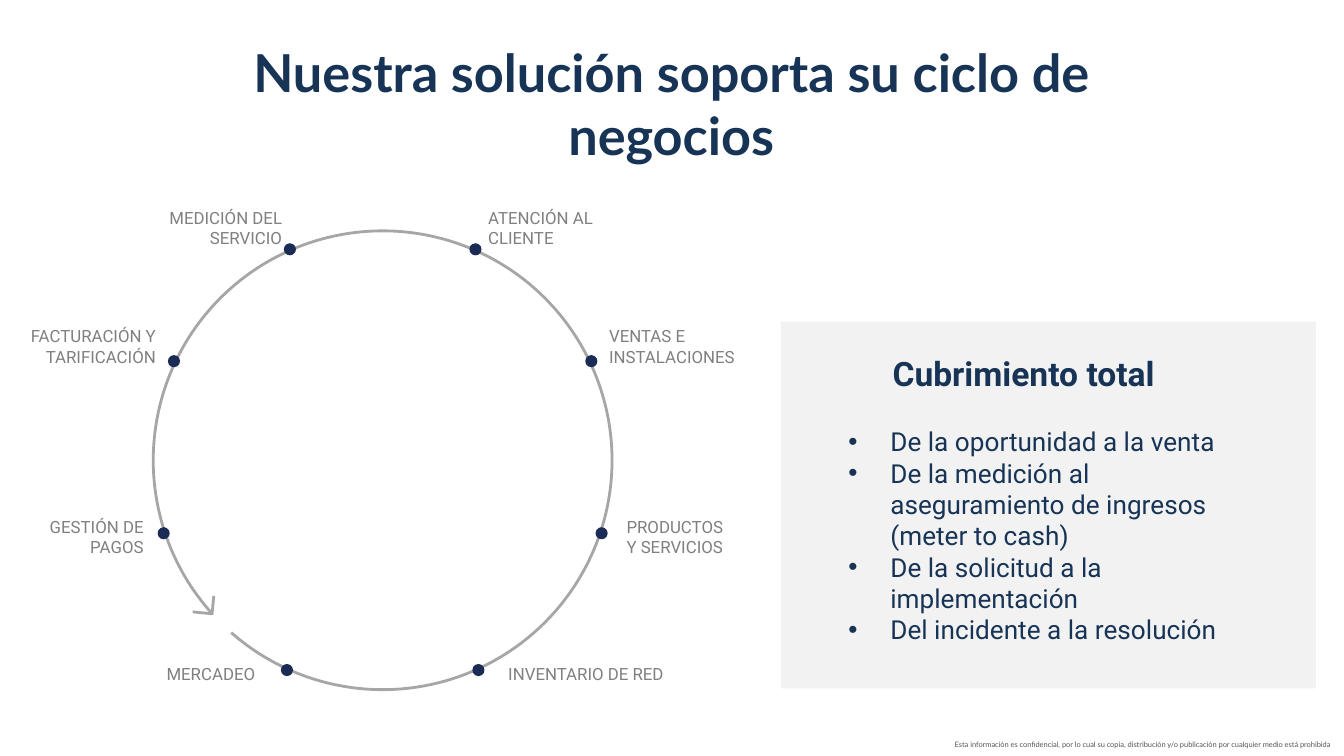
from dataclasses import dataclass

from lxml.etree import SubElement
from pptx import Presentation
from pptx.dml.color import RGBColor
from pptx.enum.shapes import MSO_SHAPE
from pptx.enum.text import MSO_ANCHOR, PP_ALIGN
from pptx.oxml.ns import qn
from pptx.shapes.autoshape import Shape
from pptx.slide import Slide
from pptx.util import Pt

NAVY = RGBColor(0x17, 0x34, 0x56)
DOT = RGBColor(0x1A, 0x2C, 0x56)
RING = RGBColor(0xA6, 0xA6, 0xA6)
LABEL = RGBColor(0x80, 0x80, 0x80)
PANEL = RGBColor(0xF2, 0xF2, 0xF2)
NOTE = RGBColor(0x57, 0x56, 0x5A)

MID_X, MID_Y, RADIUS = 205, 246.6, 122.9
DOT_SIZE = 6.5
INDENT = Pt(22.5)


@dataclass
class Box:
    left: float
    top: float
    width: float
    height: float

    def place(self) -> tuple[Pt, Pt, Pt, Pt]:
        return Pt(self.left), Pt(self.top), Pt(self.width), Pt(self.height)


@dataclass
class Style:
    font: str
    size: float
    color: RGBColor
    bold: bool = False
    align: PP_ALIGN = PP_ALIGN.LEFT
    pad: tuple[float, float] = (5.2, 2.6)


@dataclass
class Tag:
    text: str
    left: float
    width: float


@dataclass
class Row:
    """Two facing dots on the ring, with a label outside each."""
    dot_y: float
    reach: float
    top: float
    height: float
    west: Tag
    east: Tag


ROWS = [
    Row(133.6, 49.7, 108.7, 27.4,
        Tag("MEDICIÓN DEL SERVICIO", 83.5, 72.7), Tag("ATENCIÓN AL CLIENTE", 256.3, 80.6)),
    Row(193.5, 111.8, 172.1, 27.4,
        Tag("FACTURACIÓN Y TARIFICACIÓN", 0, 88.6), Tag("VENTAS E INSTALACIONES", 321.1, 78.5)),
    Row(285.7, 117.3, 274.3, 27.4,
        Tag("GESTIÓN DE PAGOS", 14.4, 67.7), Tag("PRODUCTOS Y SERVICIOS", 330.5, 62.6)),
    Row(359, 51.3, 352.8, 16.6,
        Tag("MERCADEO", 76.3, 65.5), Tag("INVENTARIO DE RED", 267.1, 98.6)),
]
POINTS = [
    "De la oportunidad a la venta",
    "De la medición al aseguramiento de ingresos (meter to cash)",
    "De la solicitud a la implementación",
    "Del incidente a la resolución",
]

TITLE = Style("Lato", 28, NAVY, True, PP_ALIGN.CENTER, (7.2, 3.6))
FOOT = Style("Lato", 4, NOTE, align=PP_ALIGN.RIGHT, pad=(7.2, 3.6))
WEST = Style("Roboto", 9, LABEL, align=PP_ALIGN.RIGHT)
EAST = Style("Roboto", 9, LABEL)
HEAD = Style("Roboto", 18, NAVY, True)
BODY = Style("Roboto", 14, NAVY)


def write(slide: Slide, box: Box, lines: list[str], style: Style,
          bullet: bool = False, anchor: MSO_ANCHOR = MSO_ANCHOR.TOP) -> None:
    frame = slide.shapes.add_textbox(*box.place()).text_frame
    frame.word_wrap = True
    frame.vertical_anchor = anchor
    frame.margin_left = frame.margin_right = Pt(style.pad[0])
    frame.margin_top = frame.margin_bottom = Pt(style.pad[1])
    frame.text = "\n".join(lines)
    for para in frame.paragraphs:
        if bullet:
            props = para._p.get_or_add_pPr()
            props.set("marL", str(INDENT))
            props.set("indent", str(-INDENT))
            SubElement(props, qn("a:buFont"), typeface="Arial")
            SubElement(props, qn("a:buChar"), char="•")
        para.alignment = style.align
        font = para.font
        font.name, font.size, font.bold = style.font, Pt(style.size), style.bold
        font.color.rgb = style.color


def solid(slide: Slide, kind: MSO_SHAPE, box: Box, color: RGBColor) -> None:
    shape = slide.shapes.add_shape(kind, *box.place())
    shape.shadow.inherit = False
    shape.fill.solid()
    shape.fill.fore_color.rgb = color
    shape.line.fill.background()


def trace(shape: Shape) -> None:
    """Leave only the ring's grey outline on a shape."""
    shape.shadow.inherit = False
    shape.fill.background()
    shape.line.color.rgb = RING
    shape.line.width = Pt(1.5)


def draw_ring(slide: Slide) -> None:
    box = Box(MID_X - RADIUS, MID_Y - RADIUS, 2 * RADIUS, 2 * RADIUS)
    arc = slide.shapes.add_shape(MSO_SHAPE.ARC, *box.place())
    for spot, angle in enumerate((138.4, 131.3)):
        arc.adjustments[spot] = angle * 0.6  # 60000 units a degree, over 100000
    trace(arc)
    pen = slide.shapes.build_freeform(Pt(103.2), Pt(327.8))
    pen.add_line_segments([(Pt(113.6), Pt(328.8)), (Pt(114.5), Pt(319.2))], close=False)
    trace(pen.convert_to_shape())


def draw_row(slide: Slide, row: Row) -> None:
    for side, tag, style in ((-1, row.west, WEST), (1, row.east, EAST)):
        write(slide, Box(tag.left, row.top, tag.width, row.height), [tag.text], style)
        dot = Box(MID_X + side * row.reach - DOT_SIZE / 2, row.dot_y - DOT_SIZE / 2,
                  DOT_SIZE, DOT_SIZE)
        solid(slide, MSO_SHAPE.OVAL, dot, DOT)


def main() -> None:
    deck = Presentation()
    deck.slide_width, deck.slide_height = Pt(720), Pt(405)
    slide = deck.slides.add_slide(deck.slide_layouts[6])

    write(slide, Box(433.4, 393.1, 286.6, 12), [
        "Esta información es confidencial, por lo cual su copia, distribución "
        "y/o publicación por cualquier medio está prohibida"], FOOT)
    write(slide, Box(115.9, 26.6, 487.4, 56.9),
          ["Nuestra solución soporta su ciclo de negocios"], TITLE,
          anchor=MSO_ANCHOR.MIDDLE)
    draw_ring(slide)
    for row in ROWS:
        draw_row(slide, row)
    solid(slide, MSO_SHAPE.RECTANGLE, Box(418.3, 172.3, 286.6, 196.6), PANEL)
    write(slide, Box(449.3, 225.4, 216.7, 124.6), POINTS, BODY, bullet=True)
    write(slide, Box(473, 186.5, 175.7, 27.4), ["Cubrimiento total"], HEAD)
    deck.save("out.pptx")


if __name__ == "__main__":
    main()
